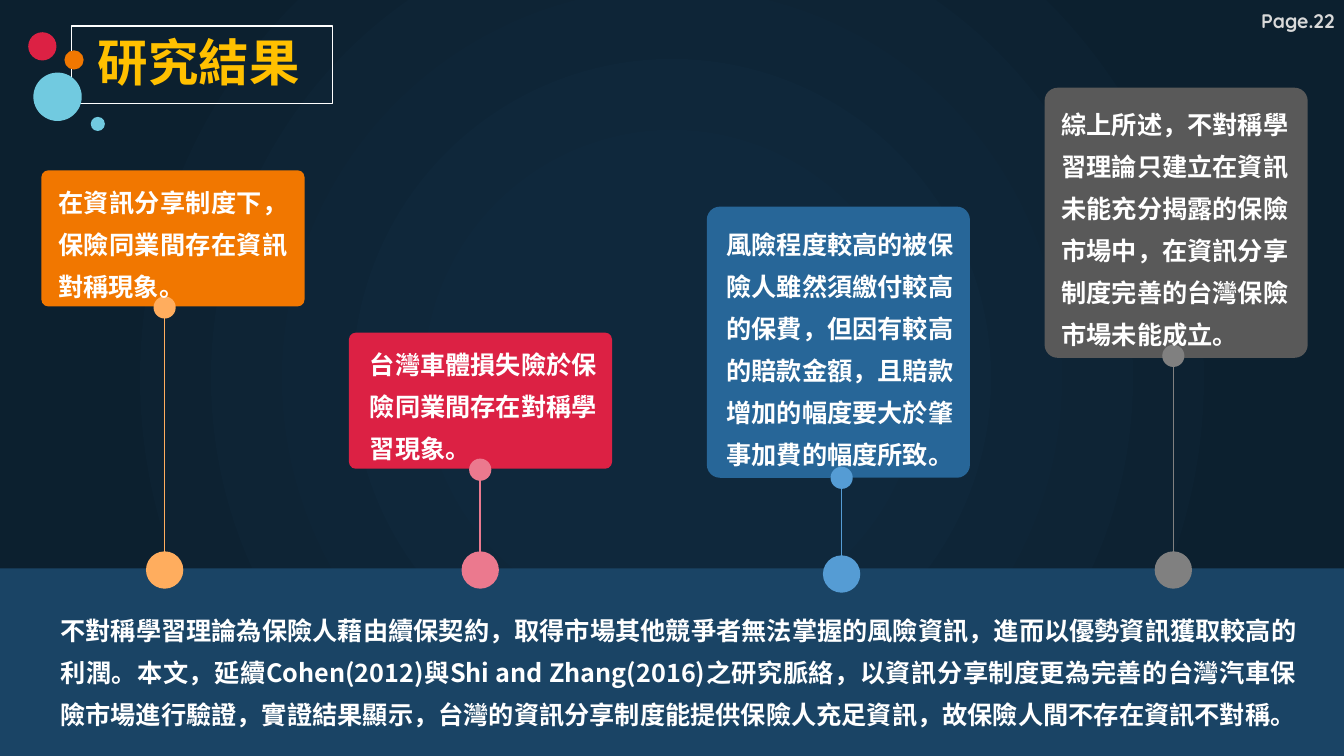
import pptx
import pptx.util
import pptx.dml.color
import pptx.enum.dml
import pptx.enum.shapes
import pptx.enum.text
import pptx.oxml
import pptx.oxml.ns
from dataclasses import dataclass

RGB = pptx.dml.color.RGBColor
SHAPE = pptx.enum.shapes.MSO_SHAPE
ALIGN = pptx.enum.text.PP_ALIGN
WIDTH = pptx.util.Inches(13.33)
HEIGHT = pptx.util.Inches(7.5)

WHITE = RGB(0xFF, 0xFF, 0xFF)
PAGE_GREY = RGB(0xD9, 0xD9, 0xD9)
GOLD = RGB(0xFF, 0xC0, 0x00)
NAVY = RGB(0x1A, 0x44, 0x65)
ORANGE = RGB(0xF1, 0x77, 0x00)
PALE_ORANGE = RGB(0xFF, 0xAD, 0x5E)
RED = RGB(0xDC, 0x21, 0x44)
PINK = RGB(0xEB, 0x79, 0x8E)
BLUE = RGB(0x27, 0x66, 0x98)
PALE_BLUE = RGB(0x55, 0x9C, 0xD4)
DARK_GREY = RGB(0x59, 0x59, 0x59)
GREY = RGB(0x80, 0x80, 0x80)
CYAN = RGB(0x71, 0xCA, 0xE0)
GLOW = [(0, RGB(0x0F, 0x28, 0x3C)), (23, RGB(0x0F, 0x28, 0x3C)),
        (69, RGB(0x0D, 0x22, 0x32)), (97, RGB(0x0C, 0x20, 0x2F))]

CJK_FONT = "Noto Sans CJK SC"
PAGE_FONT = "Quicksand"
CARD_WIDTH = 19.58
BASE_SIZE = 2.78
PIN_SIZE = 1.65


@dataclass
class Finding:
    words: str
    box: tuple
    text_area: tuple
    align: ALIGN
    stem: float
    pin: float
    base: float
    fill: RGB
    accent: RGB


FINDINGS = [
    Finding("在資訊分享制度下，保險同業間存在資訊對稱現象。",
            (3.08, 22.53, CARD_WIDTH, 18), (3.6, 22.53, 18.53, 17.6),
            ALIGN.JUSTIFY, 12.25, 40.67, 75.4, ORANGE, PALE_ORANGE),
    Finding("風險程度較高的被保險人雖然須繳付較高的保費，但因有較高的賠款金額，"
            "且賠款增加的幅度要大於肇事加費的幅度所致。",
            (52.59, 27.33, CARD_WIDTH, 35.87), (52.59, 28.13, 19.8, 34.4),
            ALIGN.CENTER, 62.62, 63.2, 75.93, BLUE, PALE_BLUE),
    Finding("台灣車體損失險於保險同業間存在對稱學習現象。",
            (25.96, 44, CARD_WIDTH, 18), (26.78, 44, 19.2, 17.6),
            ALIGN.LEFT, 35.73, 62.13, 75.4, RED, PINK),
    Finding("綜上所述，不對稱學習理論只建立在資訊未能充分揭露的保險市場中，"
            "在資訊分享制度完善的台灣保險市場未能成立。",
            (77.72, 11.6, CARD_WIDTH, 35.73), (78.24, 12.27, 18.75, 35.07),
            ALIGN.LEFT, 87.3, 47.07, 75.4, DARK_GREY, GREY),
]
SUMMARY = ("不對稱學習理論為保險人藉由續保契約，取得市場其他競爭者無法掌握的風險資訊，"
           "進而以優勢資訊獲取較高的利潤。本文，延續Cohen(2012)與Shi and Zhang(2016)之研究脈絡，"
           "以資訊分享制度更為完善的台灣汽車保險市場進行驗證，實證結果顯示，"
           "台灣的資訊分享制度能提供保險人充足資訊，故保險人間不存在資訊不對稱。")
BUBBLES = [(5.51, 7.93, 1.43, ORANGE), (3.15, 6.13, 2.1, RED),
           (7.28, 16.4, 1.05, CYAN), (4.28, 12.8, 3.6, CYAN)]


def across(share):
    return round(WIDTH * share / 100)


def down(share):
    return round(HEIGHT * share / 100)


def area(left, top, width, height):
    return across(left), down(top), across(width), down(height)


def paint_background(slide):
    fill = slide.background.fill
    fill.gradient()
    gradient = slide._element.find(".//" + pptx.oxml.ns.qn("a:gradFill"))
    stops = "".join(f'<a:gs pos="{share * 1000}"><a:srgbClr val="{color}"/></a:gs>'
                    for share, color in GLOW)
    radial = pptx.oxml.parse_xml(
        f'<a:gradFill {pptx.oxml.ns.nsdecls("a")} rotWithShape="1"><a:gsLst>{stops}</a:gsLst>'
        '<a:path path="circle"><a:fillToRect l="50000" t="50000" r="50000" b="50000"/></a:path>'
        '</a:gradFill>')
    gradient.getparent().replace(gradient, radial)


def write(frame, words, size, color, font=CJK_FONT, align=ALIGN.LEFT, spacing=None):
    frame.word_wrap = True
    frame.vertical_anchor = pptx.enum.text.MSO_ANCHOR.TOP
    paragraph = frame.paragraphs[0]
    paragraph.alignment = align
    if spacing:
        paragraph.line_spacing = pptx.util.Pt(spacing)
    run = paragraph.add_run()
    run.text = words
    run.font.size = pptx.util.Pt(size)
    run.font.bold = True
    run.font.name = font
    run.font.color.rgb = color
    east_asian = pptx.oxml.parse_xml(
        f'<a:ea {pptx.oxml.ns.nsdecls("a")} typeface="{font}"/>')
    run.font._element.find(pptx.oxml.ns.qn("a:latin")).addnext(east_asian)


def add_text(slide, place, *args, **kwargs):
    write(slide.shapes.add_textbox(*place).text_frame, *args, **kwargs)


def add_block(slide, kind, place, fill=None, outline=None):
    block = slide.shapes.add_shape(kind, *place)
    block.shadow.inherit = False
    if fill is None:
        block.fill.background()
    else:
        block.fill.solid()
        block.fill.fore_color.rgb = fill
    if outline is None:
        block.line.fill.background()
    else:
        block.line.color.rgb = outline
        block.line.width = pptx.util.Pt(1)
    return block


def add_dot(slide, x, y, size, color):
    diameter = across(size)
    place = (across(x) - diameter // 2, down(y) - diameter // 2, diameter, diameter)
    add_block(slide, SHAPE.OVAL, place, color)


def add_stem(slide, x, start, end, color):
    stem = slide.shapes.add_connector(pptx.enum.shapes.MSO_CONNECTOR.STRAIGHT,
                                      across(x), down(start), across(x), down(end))
    stem.line.color.rgb = color
    stem.line.width = pptx.util.Pt(1)
    stem._element.spPr.append(
        pptx.oxml.parse_xml(f'<a:effectLst {pptx.oxml.ns.nsdecls("a")}/>'))


def add_finding(slide, finding):
    add_dot(slide, finding.stem, finding.base, BASE_SIZE, finding.accent)
    add_stem(slide, finding.stem, finding.base, finding.pin, finding.accent)
    card = add_block(slide, SHAPE.ROUNDED_RECTANGLE, area(*finding.box), finding.fill)
    card.adjustments[0] = 0.05
    add_dot(slide, finding.stem, finding.pin, PIN_SIZE, finding.accent)


def add_heading(slide):
    title = slide.shapes.title
    title.left, title.top, title.width, title.height = area(6.53, 3.47, 33.16, 9.47)
    write(title.text_frame, "研究結果", 36, GOLD)
    add_block(slide, SHAPE.RECTANGLE, area(5.33, 3.47, 19.43, 10.27), outline=WHITE)
    for bubble in BUBBLES:
        add_dot(slide, *bubble)


def main():
    deck = pptx.Presentation()
    deck.slide_width, deck.slide_height = WIDTH, HEIGHT
    slide = deck.slides.add_slide(deck.slide_layouts.get_by_name("Title Only"))
    paint_background(slide)
    add_text(slide, area(93.1, 0.53, 9.38, 4.53), "Page.22", 14, PAGE_GREY, PAGE_FONT)
    add_block(slide, SHAPE.RECTANGLE, area(0, 75.2, 100, 24.8), NAVY)
    for finding in FINDINGS:
        add_finding(slide, finding)
    add_text(slide, area(3.75, 79.2, 93.47, 18.13), SUMMARY, 18, WHITE,
             align=ALIGN.JUSTIFY, spacing=30)
    for finding in FINDINGS:
        add_text(slide, area(*finding.text_area), finding.words, 18, WHITE,
                 align=finding.align, spacing=30)
    add_heading(slide)
    deck.save("out.pptx")


if __name__ == "__main__":
    main()
